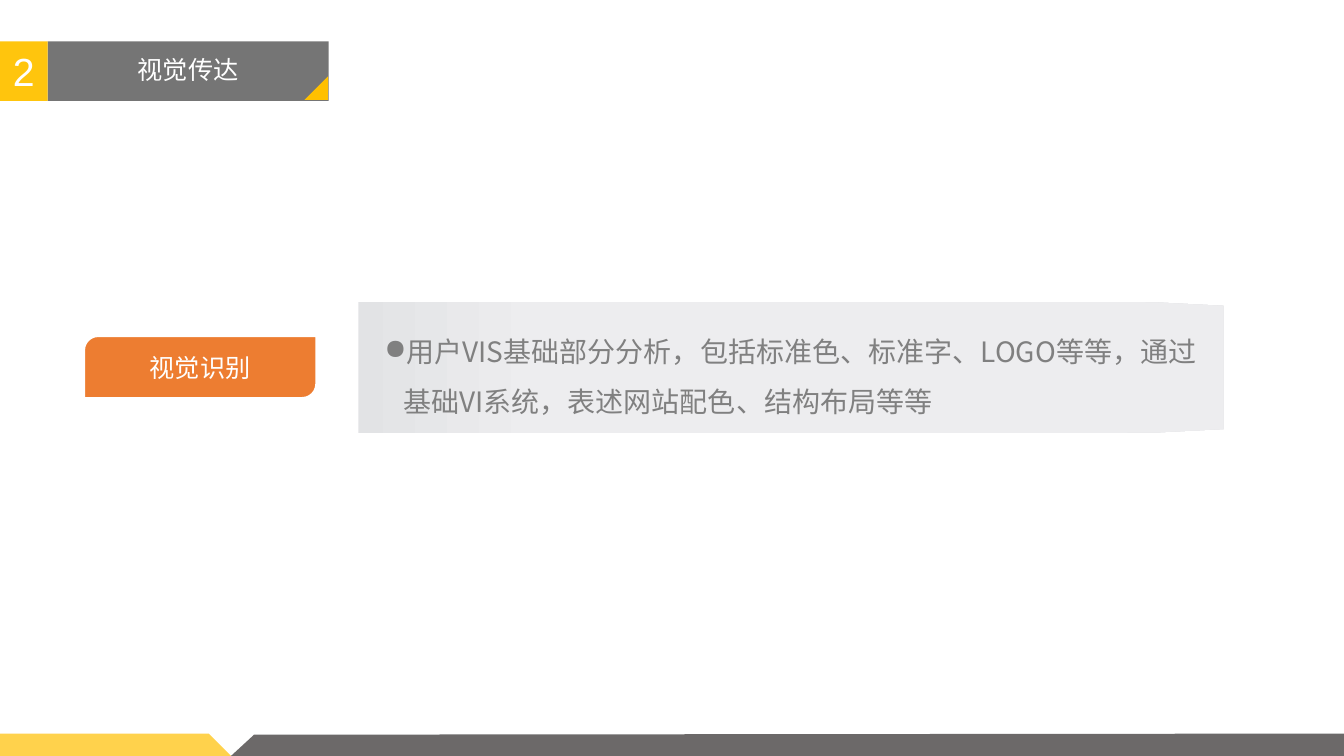
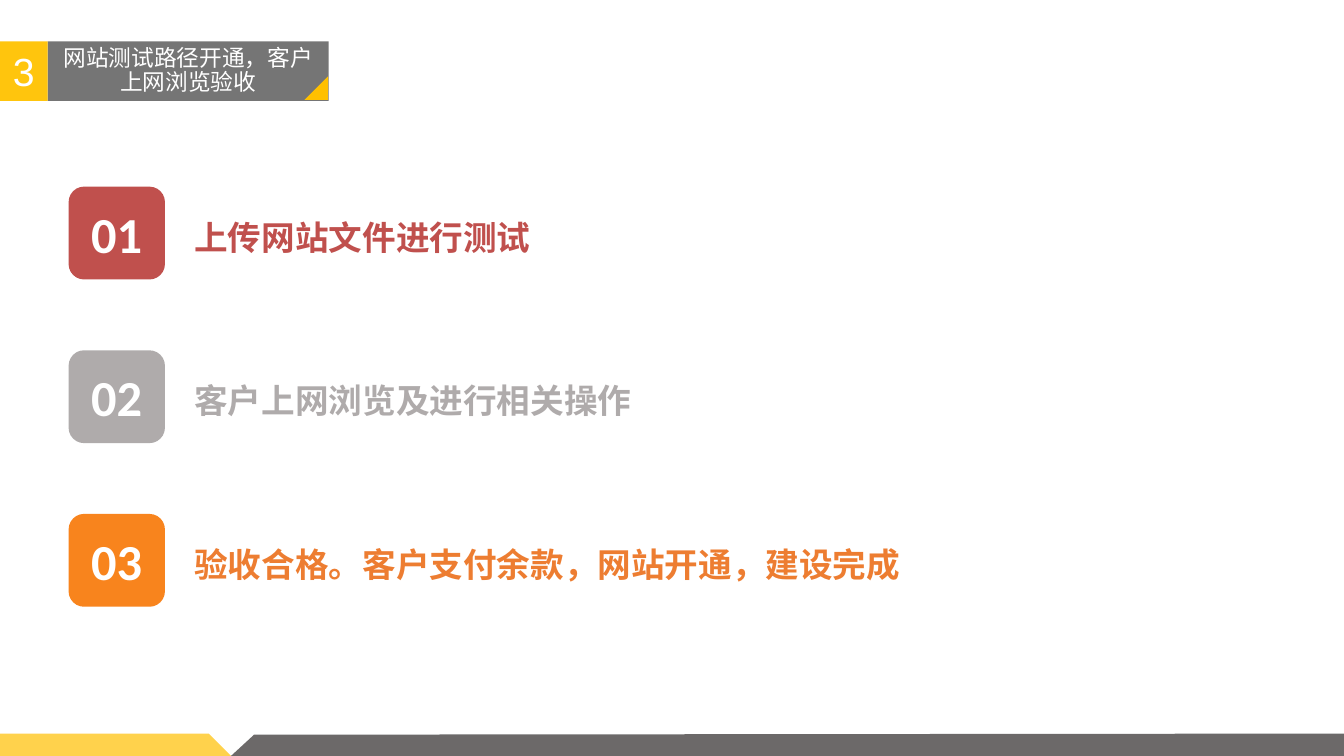
from dataclasses import dataclass

from lxml import etree
from pptx import Presentation
from pptx.dml.color import RGBColor
from pptx.enum.shapes import MSO_SHAPE
from pptx.enum.text import MSO_ANCHOR, MSO_AUTO_SIZE, PP_ALIGN
from pptx.oxml.ns import qn
from pptx.shapes.autoshape import Shape
from pptx.slide import Slide
from pptx.text.text import _Paragraph as Paragraph
from pptx.util import Pt

CENTER, LEFT = PP_ALIGN.CENTER, PP_ALIGN.LEFT
MIDDLE, TOP = MSO_ANCHOR.MIDDLE, MSO_ANCHOR.TOP
RECTANGLE, TRIANGLE = MSO_SHAPE.RECTANGLE, MSO_SHAPE.RIGHT_TRIANGLE
ROUNDED, DIAGONAL = MSO_SHAPE.ROUNDED_RECTANGLE, MSO_SHAPE.ROUND_2_DIAG_RECTANGLE
TRIANGLE = MSO_SHAPE.ISOSCELES_TRIANGLE
NO_AUTOFIT = MSO_AUTO_SIZE.NONE
TITLE_ONLY = 5

WHITE = RGBColor(0xFF, 0xFF, 0xFF)
YELLOW = RGBColor(0xFF, 0xC5, 0x0D)
AMBER = RGBColor(0xFF, 0xC0, 0x00)
TITLE_GRAY = RGBColor(0x75, 0x75, 0x75)
FOOTER_GRAY = RGBColor(0x3B, 0x38, 0x38)
PANEL_DARK = RGBColor(0xE2, 0xE3, 0xE5)
PANEL_LIGHT = RGBColor(0xED, 0xED, 0xEF)
BODY_GRAY = RGBColor(0x80, 0x80, 0x80)
ORANGE = RGBColor(0xED, 0x7D, 0x31)
BRIGHT_ORANGE = RGBColor(0xF8, 0x84, 0x1D)
RED = RGBColor(0xC0, 0x50, 0x4D)
STEP_GRAY = RGBColor(0xAF, 0xAB, 0xAB)

CHINESE, DIGITS, STEP_DIGITS = "Noto Sans CJK SC", "Arial", "Calibri"
PAGE_WIDTH, PAGE_HEIGHT = 960, 540


@dataclass(frozen=True)
class Box:
    left: float
    top: float
    width: float
    height: float

    def lengths(self) -> tuple[Pt, Pt, Pt, Pt]:
        return Pt(self.left), Pt(self.top), Pt(self.width), Pt(self.height)


@dataclass(frozen=True)
class TextStyle:
    size: float
    color: RGBColor
    font: str = CHINESE
    bold: bool = False
    align: PP_ALIGN = CENTER
    anchor: MSO_ANCHOR = MIDDLE
    line_spacing: float = 1.0


@dataclass(frozen=True)
class Step:
    text: str
    badge_color: RGBColor
    text_color: RGBColor


STEPS = (
    Step("上传网站文件进行测试", RED, RED),
    Step("客户上网浏览及进行相关操作", STEP_GRAY, STEP_GRAY),
    Step("验收合格。客户支付余款，网站开通，建设完成", BRIGHT_ORANGE, ORANGE),
)


def write_text(shape: Shape, text: str, style: TextStyle) -> Paragraph:
    frame = shape.text_frame
    frame.word_wrap = True
    frame.auto_size = NO_AUTOFIT
    frame.vertical_anchor = style.anchor
    para = frame.paragraphs[0]
    para.text = text
    para.alignment = style.align
    para.line_spacing = style.line_spacing
    font = para.font
    font.size, font.bold, font.name = Pt(style.size), style.bold, style.font
    font.color.rgb = style.color
    # East Asian typeface
    properties = para._p.pPr.find(qn("a:defRPr"))
    etree.SubElement(properties, qn("a:ea")).set("typeface", style.font)
    return para


def paint(shape: Shape, color: RGBColor, opacity: int = 100) -> None:
    shape.shadow.inherit = False
    shape.fill.solid()
    shape.fill.fore_color.rgb = color
    shape.line.fill.background()
    if opacity < 100:
        fill_color = shape._element.spPr.find(qn("a:solidFill"))[0]
        etree.SubElement(fill_color, qn("a:alpha")).set("val", str(opacity * 1000))


def add_block(page: Slide, kind: MSO_SHAPE, box: Box, color: RGBColor) -> Shape:
    block = page.shapes.add_shape(kind, *box.lengths())
    paint(block, color)
    return block


def add_text(page: Slide, box: Box, text: str, style: TextStyle) -> Paragraph:
    return write_text(page.shapes.add_textbox(*box.lengths()), text, style)


def add_outline(page: Slide, points: list[tuple[float, float]], color: RGBColor,
                opacity: int = 100) -> Shape:
    corners = [(Pt(x), Pt(y)) for x, y in points]
    builder = page.shapes.build_freeform(*corners[0])
    builder.add_line_segments(corners[1:], close=True)
    outline = builder.convert_to_shape()
    paint(outline, color, opacity)
    return outline


def add_page(deck: Presentation, number: str, title: str, title_size: float) -> Slide:
    page = deck.slides.add_slide(deck.slide_layouts[TITLE_ONLY])
    # Heading: number, title and corner mark
    badge = add_block(page, RECTANGLE, Box(0, 29.5, 34, 42.5), YELLOW)
    write_text(badge, number, TextStyle(28, WHITE, DIGITS))
    heading = page.shapes.title
    heading.left, heading.top, heading.width, heading.height = Box(
        34, 29.5, 200.8, 42.5).lengths()
    heading.fill.solid()
    heading.fill.fore_color.rgb = TITLE_GRAY
    write_text(heading, title, TextStyle(title_size, WHITE, line_spacing=0.9))
    add_block(page, TRIANGLE, Box(218.2, 61.2, 23.8, 11.8), AMBER).rotation = 135
    # Footer bands
    add_outline(page, [(0, 524), (149, 524), (165, PAGE_HEIGHT), (0, PAGE_HEIGHT)],
                AMBER, 70)
    add_outline(page, [(165, PAGE_HEIGHT), (181.5, 524.8), (PAGE_WIDTH, 524),
                       (PAGE_WIDTH, PAGE_HEIGHT)], FOOTER_GRAY, 75)
    return page


def add_identity_page(deck: Presentation) -> None:
    page = add_page(deck, "2", "视觉传达", 18)
    # Gray panel, with its left edge under a white one
    top, bottom, right = 215.5, 309.5, 874
    panel = add_outline(page, [(250.5, top), (761, top), (825, top + 0.5),
                               (right, top + 3), (right, bottom - 3),
                               (825, bottom - 0.5), (761, bottom), (250.5, bottom)],
                        PANEL_LIGHT)
    panel.fill.gradient()
    panel.fill.gradient_angle = 0
    for stop, position, color in zip(panel.fill.gradient_stops, (0, 0.22),
                                     (PANEL_DARK, PANEL_LIGHT)):
        stop.position, stop.color.rgb = position, color
    add_block(page, RECTANGLE, Box(60, top, 196, bottom - top), WHITE)
    # Label
    label = add_block(page, DIAGONAL, Box(60, 240, 166, 44.4), ORANGE)
    label.adjustments[0], label.adjustments[1] = 0.23, 0
    label.line.color.rgb, label.line.width = WHITE, Pt(1.5)
    write_text(label, "视觉识别", TextStyle(18, WHITE))
    # Bulleted description
    para = add_text(
        page, Box(267.4, 223.2, 600, 79.2),
        "用户VIS基础部分分析，包括标准色、标准字、LOGO等等，通过基础VI系统，表述网站配色、结构布局等等",
        TextStyle(20, BODY_GRAY, align=LEFT, anchor=TOP, line_spacing=1.5))
    properties = para._p.pPr
    indent = Pt(13.5)
    properties.set("marL", str(indent))
    properties.set("indent", str(-indent))
    bullet = etree.Element(qn("a:buChar"))
    bullet.set("char", "●")
    properties.find(qn("a:defRPr")).addprevious(bullet)


def add_steps_page(deck: Presentation) -> None:
    page = add_page(deck, "3", "网站测试路径开通，客户上网浏览验收", 16.2)
    first_top, pitch = 133.3, 116.9
    for index, step in enumerate(STEPS):
        top = first_top + index * pitch
        badge = add_block(page, ROUNDED, Box(49, top, 68.8, 66.3), step.badge_color)
        write_text(badge, f"{index + 1:02}",
                   TextStyle(36, WHITE, STEP_DIGITS, bold=True))
        add_text(page, Box(131.8, top + 12.2, 740, 41.8), step.text,
                 TextStyle(24, step.text_color, bold=True, align=LEFT, anchor=TOP,
                           line_spacing=1.2))


def main() -> None:
    deck = Presentation()
    deck.slide_width, deck.slide_height = Pt(PAGE_WIDTH), Pt(PAGE_HEIGHT)
    add_identity_page(deck)
    add_steps_page(deck)
    deck.save("out.pptx")


if __name__ == "__main__":
    main()
